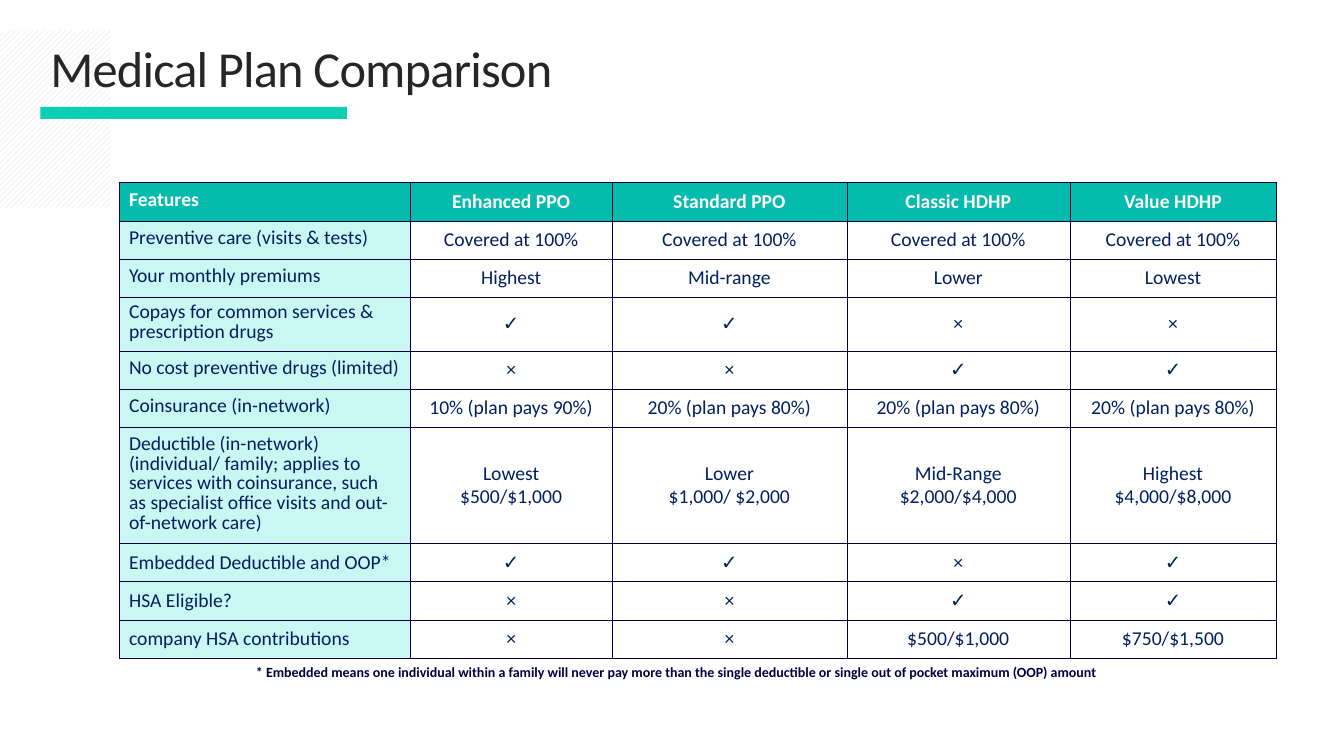
"""Build the medical plan comparison slide."""
from lxml import etree
from pptx import Presentation
from pptx.dml.color import RGBColor
from pptx.enum import dml, text
from pptx.oxml import ns
from pptx.enum import shapes
from pptx.util import Inches, Pt

WHITE = RGBColor(0xFF, 0xFF, 0xFF)
HATCH = RGBColor(0xD9, 0xD9, 0xD9)
ACCENT = RGBColor(0x0C, 0xCE, 0xB2)
HEADER = RGBColor(0x05, 0xBB, 0xAC)
FEATURE = RGBColor(0xCA, 0xF7, 0xF1)
INK = RGBColor(0x26, 0x26, 0x26)
NAVY = RGBColor(0x00, 0x20, 0x60)
DARK = RGBColor(0x00, 0x00, 0x41)

YES, NO = "✓", "×"
PLANS = [
    ("Features", "Enhanced PPO", "Standard PPO", "Classic HDHP", "Value HDHP"),
    ("Preventive care (visits & tests)",) + ("Covered at 100%",) * 4,
    ("Your monthly premiums", "Highest", "Mid-range", "Lower", "Lowest"),
    ("Copays for common services & prescription drugs", YES, YES, NO, NO),
    ("No cost preventive drugs (limited)", NO, NO, YES, YES),
    ("Coinsurance (in-network)", "10% (plan pays 90%)") + ("20% (plan pays 80%)",) * 3,
    ("Deductible (in-network)\n(individual/ family; applies to services with coinsurance, "
     "such as specialist office visits and out-of-network care)",
     "Lowest\n$500/$1,000", "Lower\n$1,000/ $2,000",
     "Mid-Range\n$2,000/$4,000", "Highest\n$4,000/$8,000"),
    ("Embedded Deductible and OOP*", YES, YES, NO, YES),
    ("HSA Eligible?", NO, NO, YES, YES),
    ("company HSA contributions", NO, NO, "$500/$1,000", "$750/$1,500"),
]
COLUMN_WIDTHS = [2.89, 2, 2.33, 2.21, 2.05]
ROW_HEIGHTS = [0.38] * 3 + [0.53] + [0.38] * 2 + [1.15] + [0.38] * 3
LAST_TIGHT_ROW = 6


def set_font(p, size, color, bold=False):
    for name, value in {"name": "Calibri", "size": Pt(size), "bold": bold}.items():
        for r in p.runs:
            setattr(r.font, name, value)
            r.font.color.rgb = color


def add_borders(cell):
    tcPr = cell._tc.get_or_add_tcPr()
    for side in ("lnL", "lnR", "lnT", "lnB"):
        ln = etree.SubElement(tcPr, ns.qn(f"a:{side}"), w=str(Pt(0.25)))
        fill = etree.SubElement(ln, ns.qn("a:solidFill"))
        etree.SubElement(fill, ns.qn("a:srgbClr"), val=str(DARK))


prs = Presentation()
prs.slide_width, prs.slide_height = Inches(13.33), Inches(7.5)
s = prs.slides.add_slide(prs.slide_layouts[5])

title = s.shapes.title
for name, value in {"left": 0.4, "top": 0.16, "width": 9.93, "height": 1.09}.items():
    setattr(title, name, Inches(value))
tf = title.text_frame
tf.text = "Medical Plan Comparison"
tf.vertical_anchor = text.MSO_ANCHOR.MIDDLE
tf.auto_size = text.MSO_AUTO_SIZE.NONE
p = tf.paragraphs[0]
p.alignment = text.PP_ALIGN.LEFT
p.line_spacing = 0.9
set_font(p, 36, INK)
p.runs[0].font._element.set("spc", "-60")

for box in [(0, 0.3, 1.1, 1.76), (0.4, 1.06, 3.04, 0.12)]:
    sp = s.shapes.add_shape(shapes.MSO_SHAPE.RECTANGLE, *map(Inches, box))
    sp.shadow.inherit = False
    sp.line.fill.background()
    if box[0] == 0:
        sp.fill.patterned()
        sp.fill.pattern = dml.MSO_PATTERN.WIDE_UPWARD_DIAGONAL
        sp.fill.fore_color.rgb = HATCH
        sp.fill.back_color.rgb = WHITE
    else:
        sp.fill.solid()
        sp.fill.fore_color.rgb = ACCENT
    title.element.addprevious(sp.element)

table = s.shapes.add_table(len(PLANS), len(COLUMN_WIDTHS), Inches(1.18), Inches(1.81),
                           Inches(sum(COLUMN_WIDTHS)), Inches(sum(ROW_HEIGHTS))).table
table.horz_banding = False
for column, width in zip(table.columns, COLUMN_WIDTHS):
    column.width = Inches(width)
for i, (height, row) in enumerate(zip(ROW_HEIGHTS, PLANS)):
    table.rows[i].height = Inches(height)
    for j, label in enumerate(row):
        cell = table.cell(i, j)
        cell.text = label
        cell.vertical_anchor = text.MSO_ANCHOR.MIDDLE
        add_borders(cell)
        cell.fill.solid()
        cell.fill.fore_color.rgb = HEADER if i == 0 else FEATURE if j == 0 else WHITE
        for p in cell.text_frame.paragraphs:
            set_font(p, 14, WHITE if i == 0 else NAVY, bold=i == 0)
            if j > 0:
                p.alignment = text.PP_ALIGN.CENTER
            elif i <= LAST_TIGHT_ROW:
                p.line_spacing = Pt(14)

footnote = s.shapes.add_textbox(Inches(2.44), Inches(6.53), Inches(11.48), Inches(0.27))
tf = footnote.text_frame
tf.word_wrap = True
tf.auto_size = text.MSO_AUTO_SIZE.SHAPE_TO_FIT_TEXT
tf.text = ("* Embedded means one individual within a family will never pay more than "
           "the single deductible or single out of pocket maximum (OOP) amount")
set_font(tf.paragraphs[0], 10, DARK, bold=True)

prs.save("out.pptx")
